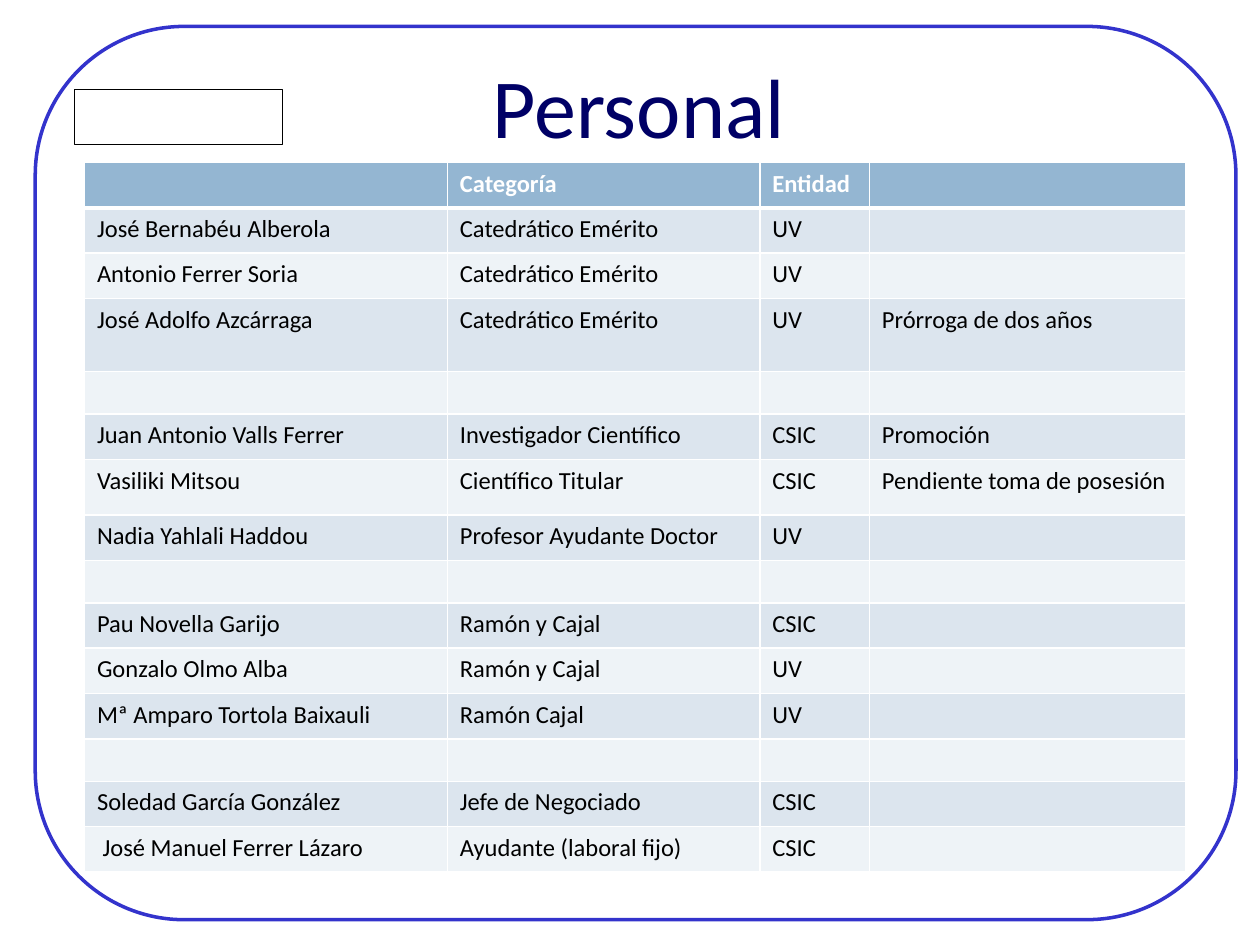
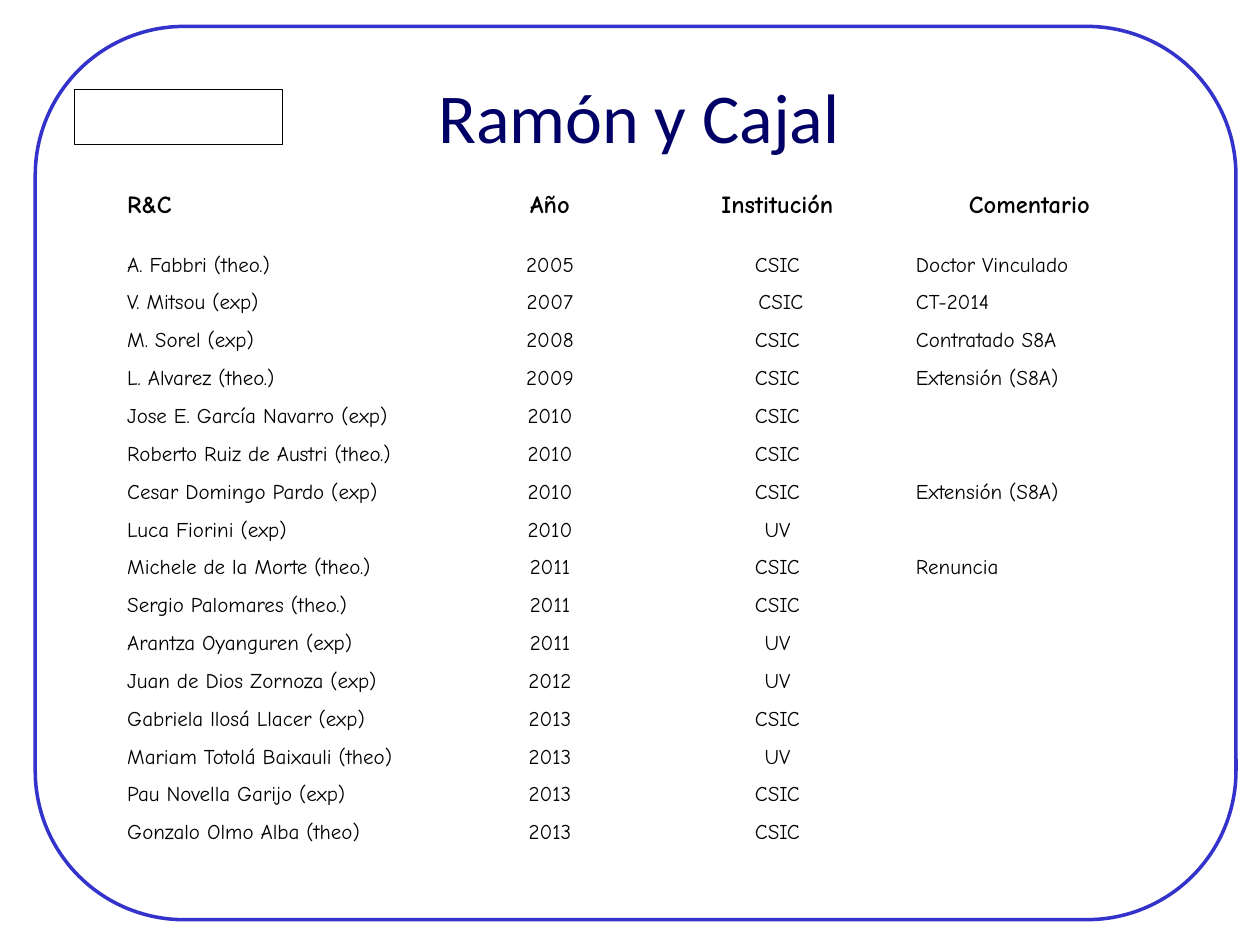
from dataclasses import dataclass
from typing import Optional

from lxml.etree import SubElement
from pptx import Presentation
from pptx.dml.color import RGBColor
from pptx.enum.shapes import MSO_SHAPE
from pptx.enum.text import MSO_ANCHOR, PP_ALIGN
from pptx.oxml.ns import qn
from pptx.util import Inches, Pt

WHITE, BLACK = "FFFFFF", "000000"
FRAME_BLUE, TITLE_BLUE = "3333CC", "000066"
HEADER_FILL, BANDS = "94B6D2", ("DCE5EE", "EEF3F7")
LEFT, CENTER = PP_ALIGN.LEFT, PP_ALIGN.CENTER

prs = Presentation()
prs.slide_width, prs.slide_height = Inches(10), Inches(7.5)


# Lengths are percentages of the slide's width or height
def across(share: float) -> int:
    return round(prs.slide_width * share / 100)


def down(share: float) -> int:
    return round(prs.slide_height * share / 100)


def color(value: str) -> RGBColor:
    return RGBColor.from_string(value)


@dataclass(frozen=True)
class Box:
    left: float
    top: float
    width: float
    height: float

    def emu(self) -> tuple[int, int, int, int]:
        return across(self.left), down(self.top), across(self.width), down(self.height)


@dataclass(frozen=True)
class Outline:
    kind: MSO_SHAPE
    box: Box
    line: str
    weight: float


@dataclass(frozen=True)
class Title:
    text: str
    top: float
    size: int


@dataclass(frozen=True)
class TableStyle:
    font: str
    header_size: int
    body_size: int
    header_color: str
    border: float
    header_rule: float
    header_fill: Optional[str] = None
    bands: Optional[tuple[str, str]] = None
    hanging: float = 0
    body_align: tuple = (LEFT,) * 4
    header_align: tuple = (LEFT,) * 4


@dataclass(frozen=True)
class Grid:
    left: float
    top: float
    columns: tuple[float, ...]
    heights: list[float]
    rows: list[tuple[str, ...]]
    style: TableStyle


# Shared outlines
OUTLINES = (
    Outline(MSO_SHAPE.ROUNDED_RECTANGLE, Box(2.8, 2.8, 95.3, 94.53), FRAME_BLUE, 2),
    Outline(MSO_SHAPE.RECTANGLE, Box(5.9, 9.47, 16.5, 5.87), BLACK, 0.5),
)


def draw_outline(s, outline: Outline) -> None:
    sp = s.shapes.add_shape(outline.kind, *outline.box.emu())
    sp.shadow.inherit = False
    sp.fill.background()
    sp.line.color.rgb = color(outline.line)
    sp.line.width = Pt(outline.weight)


def draw_title(s, title: Title) -> None:
    tf = s.shapes.add_textbox(*Box(5.7, title.top, 90, 10.53).emu()).text_frame
    tf.word_wrap = True
    tf.vertical_anchor = MSO_ANCHOR.MIDDLE
    p = tf.paragraphs[0]
    p.text = title.text
    p.alignment = CENTER
    style_run(p.runs[0], "Calibri", title.size, TITLE_BLUE)


def style_run(r, font: str, size: int, ink: str, bold: bool = False) -> None:
    r.font.name, r.font.size, r.font.bold = font, Pt(size), bold
    r.font.color.rgb = color(ink)


def set_borders(cell, weight: float, bottom: float, top: float) -> None:
    tc_pr = cell._tc.get_or_add_tcPr()
    for side, width in (("L", weight), ("R", weight), ("T", top), ("B", bottom)):
        ln = SubElement(tc_pr, qn(f"a:ln{side}"), w=str(Pt(width)))
        SubElement(SubElement(ln, qn("a:solidFill")), qn("a:srgbClr"), val=WHITE)


def fill_cell(cell, text: str, row: int, column: int, style: TableStyle) -> None:
    header = row == 0
    set_borders(cell, style.border,
                bottom=style.header_rule if header else style.border,
                top=style.header_rule if row == 1 else style.border)
    if style.bands:
        cell.fill.solid()
        cell.fill.fore_color.rgb = color(
            style.header_fill if header else style.bands[(row - 1) % 2])
    else:
        cell.fill.background()

    size = style.header_size if header else style.body_size
    p = cell.text_frame.paragraphs[0]
    if not text:
        # The end mark keeps empty rows low
        p._p.get_or_add_endParaRPr().set("sz", str(size * 100))
        return
    p.text = text
    p.alignment = (style.header_align if header else style.body_align)[column]
    if style.hanging:
        p_pr = p._p.get_or_add_pPr()
        p_pr.set("marL", str(across(style.hanging)))
        p_pr.set("indent", str(-across(style.hanging)))
    style_run(p.runs[0], style.font, size, style.header_color if header else BLACK, header)


def draw_table(s, grid: Grid) -> None:
    box = Box(grid.left, grid.top, sum(grid.columns), sum(grid.heights))
    table = s.shapes.add_table(len(grid.rows), len(grid.columns), *box.emu()).table
    table.horz_banding = table.first_row = False
    for column, width in zip(table.columns, grid.columns):
        column.width = across(width)
    for i, (height, texts) in enumerate(zip(grid.heights, grid.rows)):
        table.rows[i].height = down(height)
        for j in range(len(grid.columns)):
            fill_cell(table.cell(i, j), texts[j] if j < len(texts) else "", i, j, grid.style)


# Staff table
STAFF = [
    ("", "Categoría", "Entidad"),
    ("José Bernabéu Alberola", "Catedrático Emérito", "UV"),
    ("Antonio Ferrer Soria", "Catedrático Emérito", "UV"),
    ("José Adolfo Azcárraga", "Catedrático Emérito", "UV", "Prórroga de dos años"),
    (),
    ("Juan Antonio Valls Ferrer", "Investigador Científico", "CSIC", "Promoción"),
    ("Vasiliki Mitsou", "Científico Titular", "CSIC", "Pendiente toma de posesión"),
    ("Nadia Yahlali Haddou", "Profesor Ayudante Doctor", "UV"),
    (),
    ("Pau Novella Garijo", "Ramón y Cajal", "CSIC"),
    ("Gonzalo Olmo Alba", "Ramón y Cajal", "UV"),
    ("Mª Amparo Tortola Baixauli", "Ramón Cajal", "UV"),
    (),
    ("Soledad García González", "Jefe de Negociado", "CSIC"),
    (" José Manuel Ferrer Lázaro", "Ayudante (laboral fijo)", "CSIC"),
]
TALL_ROWS = {3: 7.73, 6: 5.87}
staff_grid = Grid(
    6.7, 17.2, (28.8, 24.8, 8.7, 25.1),
    [TALL_ROWS.get(i, 4.8 if row else 4.5) for i, row in enumerate(STAFF)], STAFF,
    TableStyle("Calibri", 14, 14, WHITE, border=1, header_rule=3,
               header_fill=HEADER_FILL, bands=BANDS))

# Fellowship table
FELLOWS = [
    ("R&C", "Año", "Institución", "Comentario"),
    ("A. Fabbri (theo.)", "2005", "CSIC", "Doctor Vinculado"),
    ("V. Mitsou (exp)", "2007", " CSIC", "CT-2014"),
    ("M. Sorel (exp)", "2008", "CSIC", "Contratado S8A"),
    ("L. Alvarez (theo.)", "2009", "CSIC", "Extensión (S8A)"),
    ("Jose E. García Navarro (exp)", "2010", "CSIC"),
    ("Roberto Ruiz de Austri (theo.)", "2010", "CSIC"),
    ("Cesar Domingo Pardo (exp)", "2010", "CSIC", "Extensión (S8A)"),
    ("Luca Fiorini (exp)", "2010", "UV"),
    ("Michele de la Morte (theo.)", "2011", "CSIC", "Renuncia"),
    ("Sergio Palomares (theo.)", "2011", "CSIC"),
    ("Arantza Oyanguren (exp)", "2011", "UV"),
    ("Juan de Dios Zornoza (exp)", "2012", "UV"),
    ("Gabriela llosá Llacer (exp)", "2013", "CSIC"),
    ("Mariam Totolá Baixauli (theo)", "2013", "UV"),
    ("Pau Novella Garijo (exp)", "2013", "CSIC"),
    ("Gonzalo Olmo Alba (theo)", "2013", "CSIC"),
    (),
]
fellows_grid = Grid(
    9.1, 19.6, (26.5, 16.1, 20, 20), [6.53] + [4] * (len(FELLOWS) - 1), FELLOWS,
    TableStyle("Comic Neue", 14, 12, BLACK, border=2.25, header_rule=2.25, hanging=3.8,
               body_align=(LEFT, CENTER, CENTER, LEFT),
               header_align=(LEFT, CENTER, CENTER, CENTER)))

# Slides
SLIDES = (
    (Title("Personal", 5.87, 48), staff_grid),
    (Title("Ramón y Cajal", 6.93, 40), fellows_grid),
)


def main() -> None:
    for title, grid in SLIDES:
        s = prs.slides.add_slide(prs.slide_layouts[6])
        for outline in OUTLINES:
            draw_outline(s, outline)
        draw_title(s, title)
        draw_table(s, grid)
    prs.save("out.pptx")


if __name__ == "__main__":
    main()
